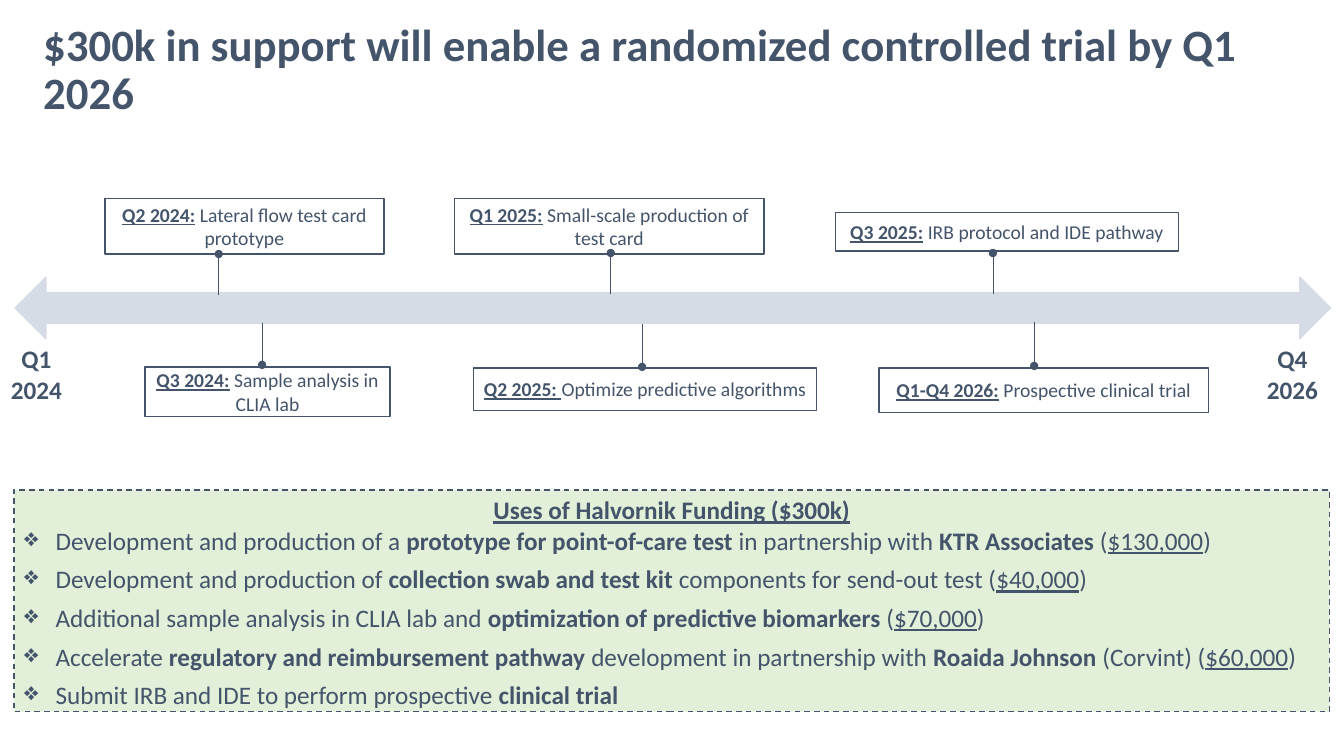
from lxml.etree import SubElement
from pptx import Presentation
from pptx.dml.color import RGBColor
from pptx.enum.dml import MSO_LINE
from pptx.enum.shapes import MSO_CONNECTOR, MSO_SHAPE
from pptx.enum.text import MSO_ANCHOR, MSO_AUTO_SIZE, PP_ALIGN
from pptx.oxml.ns import qn
from pptx.util import Pt

COLORS = {"ink": "44546A", "arrow": "D6DCE5", "panel": "E2F0D9", "box": "FFFFFF"}
FONT = "Calibri"
BULLET_INDENT = 22.5

# Runs are (text, style), where style holds "b" for bold and "u" for underline.
TITLE = "$300k in support will enable a randomized controlled trial by Q1 2026"
TITLE_FRAME = (23.76, -1.44, 939.6, 104.4)
ARROW_FRAME = (10.8, 198, 939.6, 43.92)
PANEL_FRAME = (10.08, 349.92, 939.6, 158.4)

TIMELINE_ENDS = [(-5.76, ("Q1 ", "2024 ")), (891.36, ("Q4 ", "2026 "))]
END_TOP, END_WIDTH, END_HEIGHT = 241.92, 67.68, 51.12

# Date, description, box frame, stem (x, y at arrow, y at box)
MILESTONES = [
    ("Q2 2024:", " Lateral flow test card prototype",
     (74.88, 141.84, 199.44, 39.6), (156.24, 210.96, 181.44)),
    ("Q3 2024:", " Sample analysis in CLIA lab",
     (103.68, 262.08, 174.96, 35.28), (187.2, 230.4, 260.64)),
    ("Q1 2025:", " Small-scale production of test card",
     (324.72, 141.84, 221.04, 39.6), (436.32, 210.24, 180.72)),
    ("Q2 2025: ", "Optimize predictive algorithms",
     (338.4, 262.8, 244.8, 30.24), (458.64, 231.12, 262.08)),
    ("Q3 2025:", " IRB protocol and IDE pathway",
     (596.88, 151.92, 244.8, 27.36), (709.2, 210.24, 180.72)),
    ("Q1-Q4 2026:", " Prospective clinical trial",
     (627.84, 262.8, 235.44, 31.68), (738.72, 229.68, 261.36)),
]

FUNDING_HEADING = "Uses of Halvornik Funding ($300k)"
FUNDING_USES = [
    [("Development and production of a ", ""), ("prototype for point-of-care test ", "b"),
     ("in partnership with ", ""), ("KTR Associates ", "b"),
     ("(", ""), ("$130,000", "u"), (")", "")],
    [("Development and production of ", ""), ("collection swab and test kit ", "b"),
     ("components for send-out test (", ""), ("$40,000", "u"), (")", "")],
    [("Additional sample analysis in CLIA lab and ", ""),
     ("optimization of predictive biomarkers ", "b"),
     ("(", ""), ("$70,000", "u"), (")", "")],
    [("Accelerate ", ""), ("regulatory and reimbursement pathway ", "b"),
     ("development in partnership with ", ""), ("Roaida Johnson ", "b"),
     ("(Corvint) (", ""), ("$60,000", "u"), (")", "")],
    [("Submit IRB and IDE to perform prospective", ""), (" clinical trial", "b")],
]


def color(name):
    return RGBColor.from_string(COLORS[name])


def points(values):
    return [Pt(value) for value in values]


def apply_format(target, values):
    for name, value in values.items():
        setattr(target, name, value)


def write_paragraphs(shape, paragraphs, size, align, anchor=MSO_ANCHOR.TOP):
    """Fill a shape with paragraphs, each a list of (text, style) runs."""
    frame = shape.text_frame
    apply_format(frame, {"word_wrap": True, "vertical_anchor": anchor})
    for index, runs in enumerate(paragraphs):
        paragraph = frame.add_paragraph() if index else frame.paragraphs[0]
        paragraph.alignment = align
        for text, style in runs:
            run = paragraph.add_run()
            run.text = text
            apply_format(run.font, {"name": FONT, "size": Pt(size),
                                    "bold": "b" in style, "underline": "u" in style})
            run.font.color.rgb = color("ink")
    return frame


def add_block(slide, preset, frame, fill, line):
    shape = slide.shapes.add_shape(preset, *points(frame))
    shape.shadow.inherit = False
    shape.fill.solid()
    shape.fill.fore_color.rgb = color(fill)
    shape.line.color.rgb = color(line)
    shape.line.width = Pt(1)
    return shape


def add_stem(slide, x, start, end):
    """Draw a thin line from the arrow to a box, ending in a dot."""
    stem = slide.shapes.add_connector(MSO_CONNECTOR.STRAIGHT, *points((x, start, x, end)))
    stem.line.color.rgb = color("ink")
    stem.line.width = Pt(0.5)
    SubElement(stem.line._get_or_add_ln(), qn("a:tailEnd"), type="oval")
    SubElement(stem._element.spPr, qn("a:effectLst"))


def add_bullet(paragraph):
    paragraph.alignment = PP_ALIGN.LEFT
    paragraph.space_after = Pt(6)
    properties = paragraph._p.get_or_add_pPr()
    properties.set("marL", str(Pt(BULLET_INDENT)))
    properties.set("indent", str(-Pt(BULLET_INDENT)))
    SubElement(properties, qn("a:buChar"), char="❖")


def add_title(slide):
    title = slide.shapes.add_textbox(*points(TITLE_FRAME))
    frame = write_paragraphs(title, [[(TITLE, "b")]], 32, PP_ALIGN.LEFT, MSO_ANCHOR.MIDDLE)
    frame.paragraphs[0].line_spacing = 0.9


def add_timeline(slide):
    add_block(slide, MSO_SHAPE.LEFT_RIGHT_ARROW, ARROW_FRAME, "arrow", "arrow")
    for left, lines in TIMELINE_ENDS:
        label = slide.shapes.add_textbox(*points((left, END_TOP, END_WIDTH, END_HEIGHT)))
        frame = write_paragraphs(label, [[(line, "b")] for line in lines], 18, PP_ALIGN.CENTER)
        frame.auto_size = MSO_AUTO_SIZE.SHAPE_TO_FIT_TEXT
    for date, description, frame, stem in MILESTONES:
        box = add_block(slide, MSO_SHAPE.RECTANGLE, frame, "box", "ink")
        write_paragraphs(box, [[(date, "bu"), (description, "")]], 14,
                         PP_ALIGN.CENTER, MSO_ANCHOR.MIDDLE)
        add_stem(slide, *stem)


def add_funding(slide):
    panel = add_block(slide, MSO_SHAPE.RECTANGLE, PANEL_FRAME, "panel", "ink")
    panel.line.dash_style = MSO_LINE.DASH
    frame = write_paragraphs(panel, [[(FUNDING_HEADING, "bu")], *FUNDING_USES],
                             18, PP_ALIGN.CENTER)
    for paragraph in frame.paragraphs[1:]:
        add_bullet(paragraph)


def main():
    presentation = Presentation()
    apply_format(presentation, {"slide_width": Pt(960), "slide_height": Pt(540)})
    slide = presentation.slides.add_slide(presentation.slide_layouts[6])
    add_title(slide)
    add_timeline(slide)
    add_funding(slide)
    presentation.save("out.pptx")


if __name__ == "__main__":
    main()
